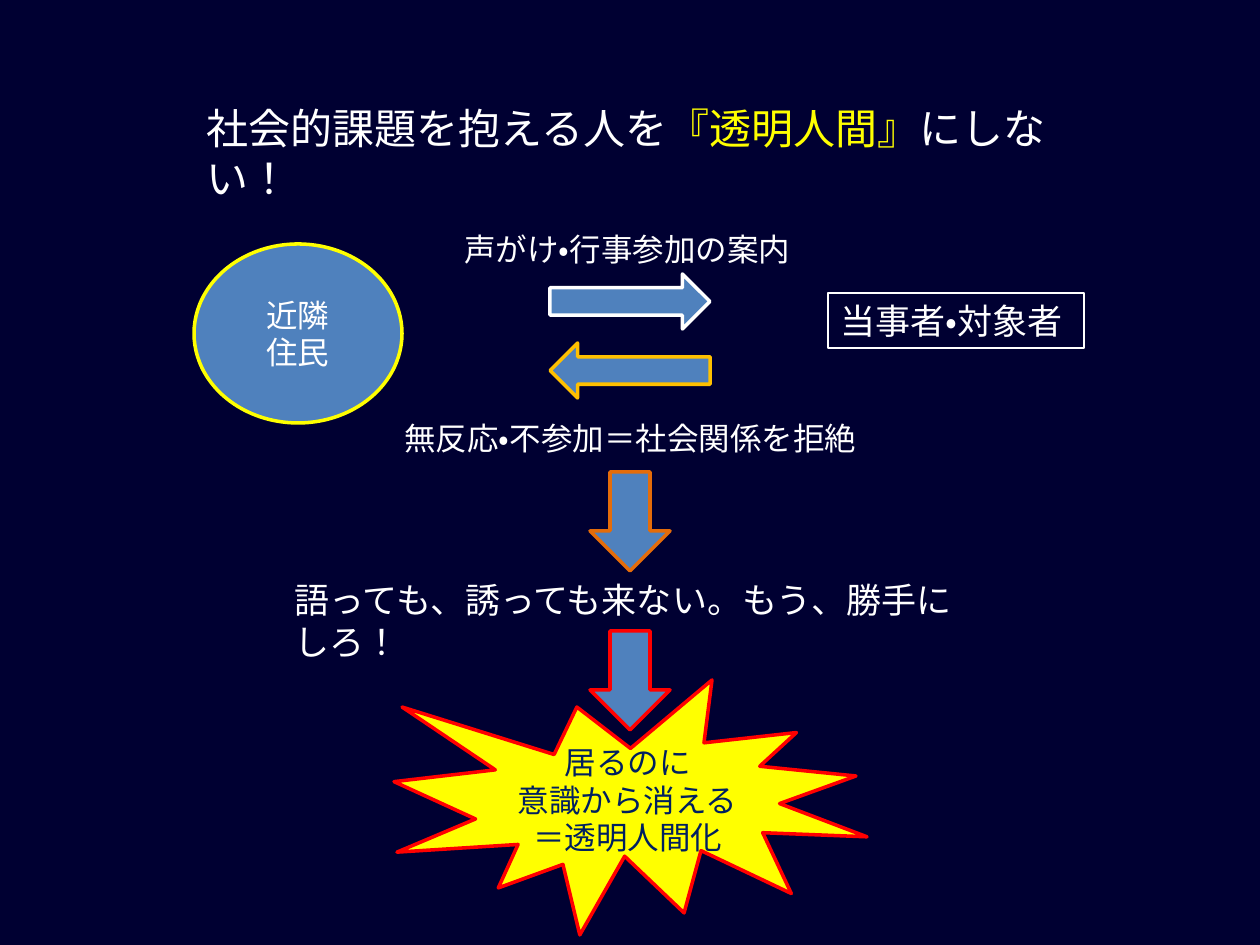
from dataclasses import dataclass

from pptx import Presentation
from pptx.dml.color import RGBColor
from pptx.enum.lang import MSO_LANGUAGE_ID
from pptx.enum.shapes import MSO_SHAPE
from pptx.enum.text import MSO_ANCHOR, MSO_AUTO_SIZE, PP_ALIGN
from pptx.util import Emu, Pt

PX_PER_INCH = 126


@dataclass(frozen=True)
class Theme:
    font: str = "Calibri"
    background: str = "000032"
    text: str = "FFFFFF"
    dark_text: str = "002060"
    fill: str = "4F81BD"
    yellow: str = "FFFF00"
    amber: str = "FFC000"
    orange: str = "E46C0A"
    red: str = "FF0000"
    title_size: int = 24
    large_size: int = 20
    body_size: int = 18
    line_width: float = 2
    thin_line: float = 0.75


THEME = Theme()


def px(n):
    return Emu(round(n * 914400 / PX_PER_INCH))


def rgb(color):
    return RGBColor.from_string(color)


def write(sp, text, size=THEME.body_size, color=THEME.text, wrap=True,
          align=PP_ALIGN.LEFT, anchor=MSO_ANCHOR.TOP, accents=None):
    """Fill a shape with text: one paragraph a line, accents colour whole phrases."""
    accents = accents or {}
    tf = sp.text_frame
    tf.word_wrap = wrap
    tf.vertical_anchor = anchor
    for i, line in enumerate(text.split("\n")):
        p = tf.paragraphs[0] if i == 0 else tf.add_paragraph()
        p.alignment = align
        for phrase in line.split("|"):
            r = p.add_run()
            r.text = phrase
            r.font.name = THEME.font
            r.font.size = Pt(size)
            r.font.language_id = MSO_LANGUAGE_ID.JAPANESE
            r.font.color.rgb = rgb(accents.get(phrase, color))


def add_label(slide, box, text, border=None, **fmt):
    sp = slide.shapes.add_textbox(*map(px, box))
    write(sp, text, **fmt)
    sp.text_frame.auto_size = MSO_AUTO_SIZE.SHAPE_TO_FIT_TEXT
    if border:
        sp.line.color.rgb = rgb(border)
        sp.line.width = Pt(THEME.thin_line)
    return sp


def add_figure(slide, kind, box, line, fill=THEME.fill, text=None, **fmt):
    sp = slide.shapes.add_shape(kind, *map(px, box))
    sp.shadow.inherit = False
    sp.fill.solid()
    sp.fill.fore_color.rgb = rgb(fill)
    sp.line.color.rgb = rgb(line)
    sp.line.width = Pt(THEME.line_width)
    if text:
        write(sp, text, align=PP_ALIGN.CENTER, anchor=MSO_ANCHOR.MIDDLE, **fmt)
    return sp


def main():
    prs = Presentation()
    prs.slide_width, prs.slide_height = px(1260), px(945)
    slide = prs.slides.add_slide(prs.slide_layouts[6])
    slide.background.fill.solid()
    slide.background.fill.fore_color.rgb = rgb(THEME.background)

    # Title
    add_label(slide, (194, 96, 874, 63), "社会的課題を抱える人を|『透明人間』|にしない！",
              size=THEME.title_size, accents={"『透明人間』": THEME.yellow})

    # The two sides: neighbours and the person concerned
    add_label(slide, (828, 293, 256, 55), "当事者・対象者",
              border=THEME.text, size=THEME.large_size, wrap=False)
    add_figure(slide, MSO_SHAPE.OVAL, (194, 244, 208, 179), THEME.yellow,
               text="近隣\n住民")

    # Invitation and its refusal
    add_figure(slide, MSO_SHAPE.RIGHT_ARROW, (550, 274, 160, 55), THEME.text)
    add_label(slide, (452, 224, 358, 50), "声がけ・行事参加の案内", wrap=False)
    reply = add_figure(slide, MSO_SHAPE.RIGHT_ARROW, (550, 343, 160, 55), THEME.amber)
    reply.rotation = 180
    add_label(slide, (392, 413, 483, 50), "無反応・不参加＝社会関係を拒絶", wrap=False)

    # Consequences, going down
    add_label(slide, (282, 572, 694, 55), "語っても、誘っても来ない。もう、勝手にしろ！",
              size=THEME.large_size)
    for top, color in ((472, THEME.orange), (631, THEME.red)):
        add_figure(slide, MSO_SHAPE.DOWN_ARROW, (590, top, 80, 99), color)

    # Outcome
    add_figure(slide, MSO_SHAPE.EXPLOSION1, (394, 680, 473, 255), THEME.red,
               fill=THEME.yellow, text="居るのに\n意識から消える\n＝透明人間化",
               color=THEME.dark_text)

    prs.save("out.pptx")


if __name__ == "__main__":
    main()
